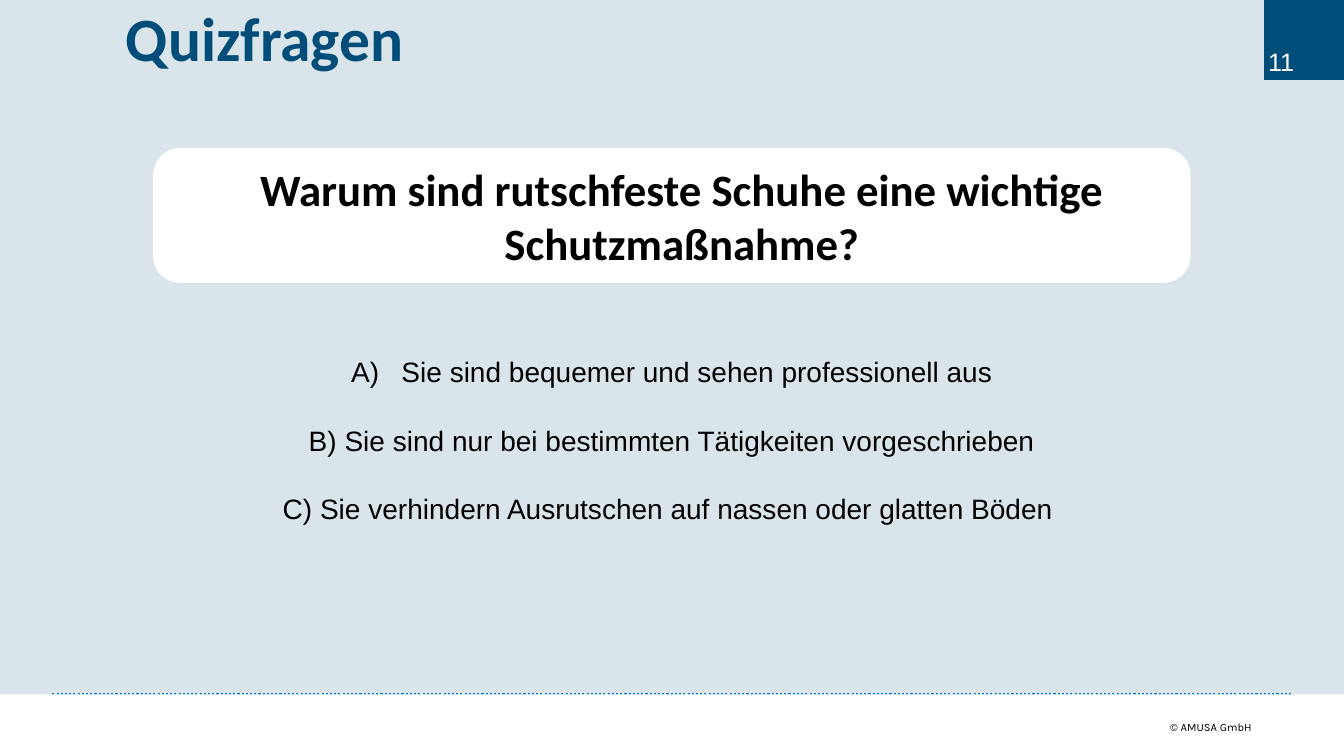
from lxml import etree
from pptx import Presentation
from pptx.dml.color import RGBColor
from pptx.enum import dml, shapes, text
from pptx.oxml.ns import qn
from pptx.util import Pt

NAVY, WHITE, BLACK = "004D7A", "FFFFFF", "000000"


def color(hex_string):
    return RGBColor.from_string(hex_string)


def write(para, words, size, font, hex_string, bold=False):
    """Add one formatted run to the paragraph."""
    span = para.add_run()
    span.text = words
    span.font.size = Pt(size)
    span.font.name = font
    span.font.bold = bold
    span.font.color.rgb = color(hex_string)


deck = Presentation()
deck.slide_width, deck.slide_height = Pt(960), Pt(540)
page = deck.slides.add_slide(deck.slide_layouts[1])
page.background.fill.solid()
page.background.fill.fore_color.rgb = color("DAE5EB")

# Footer rule
rule = page.shapes.add_connector(
    shapes.MSO_CONNECTOR.STRAIGHT, Pt(37.4), Pt(496), Pt(922.3), Pt(496))
rule.line.color.rgb = color("1179BF")
rule.line.width = Pt(1.5)
rule.line.dash_style = dml.MSO_LINE.ROUND_DOT
etree.SubElement(rule._element.spPr, qn("a:effectLst"))

# Footer band, question panel and page-number tab
panels = []
for kind, left, top, width, height, fill in [
    (shapes.MSO_SHAPE.RECTANGLE, 0, 496, 960, 44, WHITE),
    (shapes.MSO_SHAPE.ROUNDED_RECTANGLE, 109.4, 105.8, 741, 96.2, WHITE),
    (shapes.MSO_SHAPE.RECTANGLE, 903, 0, 57, 57, NAVY),
]:
    panel = page.shapes.add_shape(kind, Pt(left), Pt(top), Pt(width), Pt(height))
    panel.fill.solid()
    panel.fill.fore_color.rgb = color(fill)
    panel.line.fill.background()
    panel.shadow.inherit = False
    panels.append(panel)

question = panels[1]
question.adjustments[0] = 0.2
frame = question.text_frame
frame.word_wrap = True
frame.vertical_anchor = text.MSO_ANCHOR.MIDDLE
frame.margin_left, frame.margin_right = Pt(21.6), Pt(7.2)
frame.margin_top = frame.margin_bottom = 0
para = frame.paragraphs[0]
para.alignment = text.PP_ALIGN.CENTER
write(para, "Warum sind rutschfeste Schuhe eine wichtige Schutzmaßnahme?",
      32, "Calibri", BLACK, bold=True)

# Title
title = page.shapes.title
title.left, title.top, title.width, title.height = Pt(82.8), Pt(17.3), Pt(635), Pt(40.3)
frame = title.text_frame
frame.auto_size = text.MSO_AUTO_SIZE.NONE
frame.vertical_anchor = text.MSO_ANCHOR.TOP
para = frame.paragraphs[0]
para.alignment = text.PP_ALIGN.LEFT
para.line_spacing = Pt(32)
write(para, "Quizfragen", 44, "Calibri", NAVY, bold=True)

# Answers: only the first one is numbered automatically
answers = page.placeholders[1]
answers.left, answers.top, answers.width, answers.height = Pt(109.4), Pt(249.8), Pt(741), Pt(128.2)
frame = answers.text_frame
frame.auto_size = text.MSO_AUTO_SIZE.NONE
for number, answer in enumerate([
    "Sie sind bequemer und sehen professionell aus",
    "B) Sie sind nur bei bestimmten Tätigkeiten vorgeschrieben",
    "C) Sie verhindern Ausrutschen auf nassen oder glatten Böden ",
]):
    para = frame.add_paragraph() if number else frame.paragraphs[0]
    para.alignment = text.PP_ALIGN.CENTER
    para.space_before = Pt(25 if number else 0)
    indent = 0 if number else Pt(36)
    props = para._p.get_or_add_pPr()
    props.set("marL", str(indent))
    props.set("indent", str(-indent))
    if number:
        etree.SubElement(props, qn("a:buNone"))
    else:
        etree.SubElement(props, qn("a:buFont"), typeface="Arial")
        etree.SubElement(props, qn("a:buAutoNum"), type="alphaUcParenR")
    write(para, answer, 20, "Arial", BLACK)

# Page number and copyright line
for words, left, top, width, height, size, font, ink, align in [
    ("11", 905.8, 33.1, 21.6, 21.6, 18, "Arial", WHITE, text.PP_ALIGN.LEFT),
    ("© AMUSA GmbH", 800, 514, 94.2, 10.7, 8, "Karla", BLACK, text.PP_ALIGN.RIGHT),
]:
    box = page.shapes.add_textbox(Pt(left), Pt(top), Pt(width), Pt(height))
    frame = box.text_frame
    frame.word_wrap = True
    frame.margin_left = frame.margin_right = frame.margin_top = frame.margin_bottom = 0
    frame.vertical_anchor = text.MSO_ANCHOR.MIDDLE
    para = frame.paragraphs[0]
    para.alignment = align
    write(para, words, size, font, ink)

deck.save("out.pptx")
